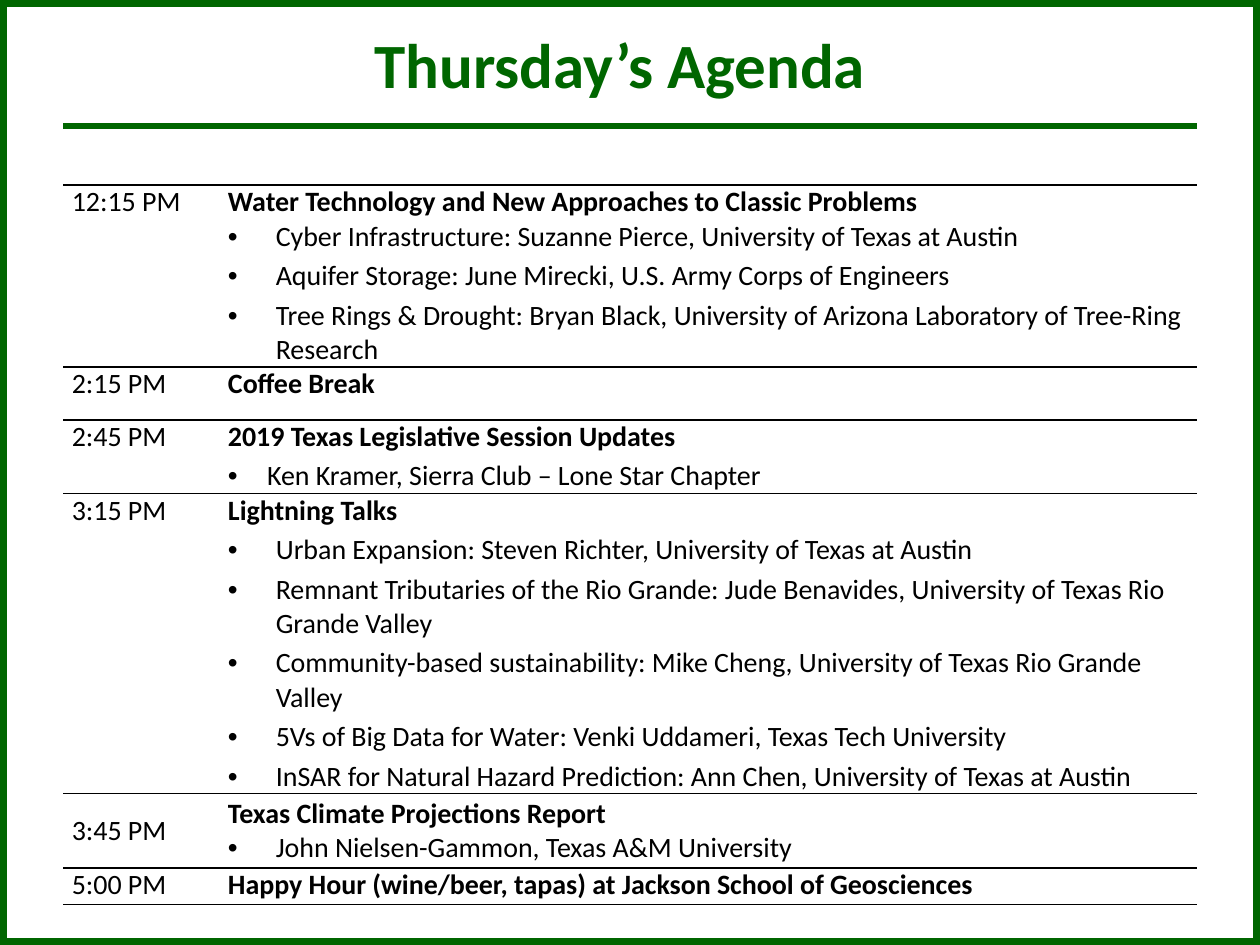
from lxml import etree
from pptx import Presentation
from pptx.dml.color import RGBColor
from pptx.enum.shapes import MSO_CONNECTOR, MSO_SHAPE
from pptx.enum.text import MSO_ANCHOR, PP_ALIGN
from pptx.oxml.ns import qn
from pptx.util import Inches, Pt

GREEN = RGBColor(0x00, 0x66, 0x00)
BLACK = RGBColor(0x00, 0x00, 0x00)
FONT = "Calibri"
TOP, MIDDLE = MSO_ANCHOR.TOP, MSO_ANCHOR.MIDDLE

# height, anchor, time, session, bullet indent, space before and after bullets, talks
AGENDA = [
    (1.44, TOP, "12:15 PM",
     "Water Technology and New Approaches to Classic Problems", 0.38, 0, 3,
     ["Cyber Infrastructure: Suzanne Pierce, University of Texas at Austin",
      "Aquifer Storage: June Mirecki, U.S. Army Corps of Engineers",
      "Tree Rings & Drought: Bryan Black, University of Arizona Laboratory of "
      "Tree-Ring Research"]),
    (0.42, TOP, "2:15 PM", "Coffee Break", 0, 0, 0, []),
    (0.58, TOP, "2:45 PM", "2019 Texas Legislative Session Updates", 0.31, 3, 0,
     ["Ken Kramer, Sierra Club – Lone Star Chapter"]),
    (2.38, TOP, "3:15 PM", "Lightning Talks", 0.38, 3, 0,
     ["Urban Expansion: Steven Richter, University of Texas at Austin",
      "Remnant Tributaries of the Rio Grande: Jude Benavides, University of Texas "
      "Rio Grande Valley",
      "Community-based sustainability: Mike Cheng, University of Texas Rio Grande "
      "Valley",
      "5Vs of Big Data for Water: Venki Uddameri, Texas Tech University",
      "InSAR for Natural Hazard Prediction: Ann Chen, University of Texas at Austin"]),
    (0.59, MIDDLE, "3:45 PM", "Texas Climate Projections Report", 0.38, 0, 0,
     ["John Nielsen-Gammon, Texas A&M University"]),
    (0.29, TOP, "5:00 PM",
     "Happy Hour (wine/beer, tapas) at Jackson School of Geosciences", 0, 0, 0, []),
]


def format_cell(cell, anchor):
    """Clear the fill and rule the cell above and below only."""
    cell.margin_left = cell.margin_right = Inches(0.07)
    cell.margin_top = cell.margin_bottom = 0
    cell.vertical_anchor = anchor
    cell.fill.background()
    properties = cell._tc.get_or_add_tcPr()
    for position, side in enumerate(("lnL", "lnR", "lnT", "lnB")):
        border = etree.Element(qn(f"a:{side}"), w=str(Pt(1)))
        if side in ("lnT", "lnB"):
            fill = etree.SubElement(border, qn("a:solidFill"))
            etree.SubElement(fill, qn("a:srgbClr"), val=str(BLACK))
        else:
            etree.SubElement(border, qn("a:noFill"))
        properties.insert(position, border)


def write_paragraph(paragraph, text, bold=False, indent=0):
    """Write a line of agenda text, bulleted when it has an indent."""
    paragraph.text = text
    if indent:
        properties = paragraph._p.get_or_add_pPr()
        properties.set("marL", str(Inches(indent)))
        properties.set("indent", str(-Inches(indent)))
        etree.SubElement(properties, qn("a:buFont"), typeface="Arial")
        etree.SubElement(properties, qn("a:buChar"), char="•")
    paragraph.font.name = FONT
    paragraph.font.size = Pt(16)
    paragraph.font.bold = bold
    paragraph.font.color.rgb = BLACK


presentation = Presentation()
presentation.slide_width = Inches(10)
presentation.slide_height = Inches(7.5)
slide = presentation.slides.add_slide(presentation.slide_layouts[5])

title = slide.shapes.title
title.left, title.top = Inches(0.92), Inches(0)
title.width, title.height = Inches(8), Inches(1)
title.text_frame.text = "Thursday’s Agenda"
title.text_frame.vertical_anchor = MIDDLE
heading = title.text_frame.paragraphs[0]
heading.alignment = PP_ALIGN.CENTER
heading.font.name = FONT
heading.font.size = Pt(36)
heading.font.bold = True
heading.font.color.rgb = GREEN

frame = slide.shapes.add_shape(
    MSO_SHAPE.RECTANGLE, 0, 0, presentation.slide_width, presentation.slide_height)
frame.shadow.inherit = False
frame.fill.background()
frame.line.color.rgb = GREEN
frame.line.width = Pt(8)

title_rule = slide.shapes.add_connector(
    MSO_CONNECTOR.STRAIGHT, Inches(0.5), Inches(1), Inches(9.5), Inches(1))
title_rule.line.color.rgb = GREEN
title_rule.line.width = Pt(3.5)
etree.SubElement(title_rule._element.spPr, qn("a:effectLst"))

table_height = sum(row[0] for row in AGENDA)
table = slide.shapes.add_table(
    len(AGENDA), 2, Inches(0.5), Inches(1.47), Inches(9), Inches(table_height)).table
table.first_row = False
table.horz_banding = False
table.columns[0].width = Inches(1.24)
table.columns[1].width = Inches(7.76)

for row, entry in zip(table.rows, AGENDA):
    height, anchor, time, session, indent, before, after, talks = entry
    row.height = Inches(height)
    time_cell, session_cell = row.cells
    format_cell(time_cell, anchor)
    format_cell(session_cell, anchor)
    write_paragraph(time_cell.text_frame.paragraphs[0], time)
    write_paragraph(session_cell.text_frame.paragraphs[0], session, bold=True)
    for talk in talks:
        paragraph = session_cell.text_frame.add_paragraph()
        write_paragraph(paragraph, talk, indent=indent)
        paragraph.space_before = Pt(before)
        paragraph.space_after = Pt(after)

presentation.save("out.pptx")
